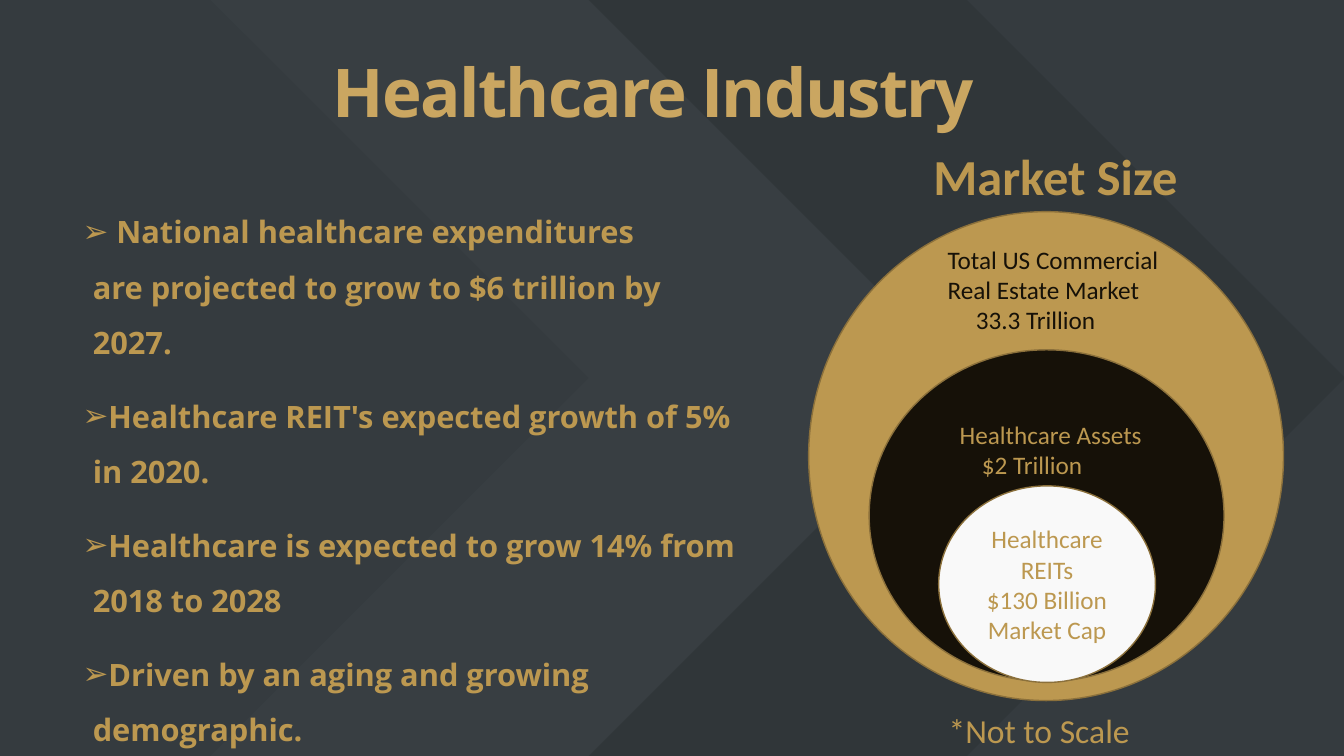
from lxml.etree import SubElement
from pptx import Presentation
from pptx.dml.color import RGBColor
from pptx.enum.shapes import MSO_SHAPE
from pptx.enum.text import MSO_ANCHOR, MSO_AUTO_SIZE, PP_ALIGN
from pptx.oxml.ns import qn
from pptx.util import Inches, Pt

GOLD = RGBColor(0xBC, 0x98, 0x50)
TITLE_GOLD = RGBColor(0xCA, 0xA6, 0x61)
OUTLINE = RGBColor(0x8B, 0x70, 0x3B)
NEAR_BLACK = RGBColor(0x16, 0x11, 0x08)
OFF_WHITE = RGBColor(0xF9, 0xF9, 0xF9)
BACKGROUND = RGBColor(0x35, 0x3B, 0x3F)
SLATE = RGBColor(0x54, 0x5E, 0x64)
CHARCOAL = RGBColor(0x26, 0x2B, 0x2E)

# Content: "~" marks a non-breaking space
TITLE = "Healthcare Industry~"
BULLETS = [
    "~National healthcare~expenditures are~projected to grow~to $6 trillion by 2027.",
    "Healthcare~REIT's expected growth of 5% in 2020.",
    "Healthcare is expected to grow 14% from 2018 to 2028",
    "Driven by an aging~and growing demographic.",
]
# left, fill, opacity in percent
CHEVRONS = [(2.09, SLATE, 10), (5.84, CHARCOAL, 30)]
# box, fill
MARKET_ELLIPSES = [
    ((8.02, 2.1, 4.71, 4.85), GOLD),
    ((8.62, 3.47, 3.52, 3.29), NEAR_BLACK),
    ((9.31, 4.82, 2.15, 1.95), OFF_WHITE),
]
REIT_LINES = ["Healthcare REITs", "$130 Billion Market Cap"]
# box, lines, indent of the second line, format
LABELS = [
    ((9.3, 2.37, 2.58, 1.31), ["Total US Commercial Real~Estate Market", "33.3 Trillion"],
     0.28, dict(color=NEAR_BLACK)),
    ((9.42, 4.11, 3, 0.71), ["Healthcare Assets", "$2 Trillion"], 0.22, {}),
    ((9.16, 1.39, 2.76, 0.71), ["Market Size"], 0, dict(size=36, bold=True)),
    ((9.31, 6.99, 3, 0.5), ["*Not to Scale"], 0, dict(size=24)),
]


def write_paragraph(paragraph, text, size=18, font="Calibri", color=GOLD, bold=False,
                    align=PP_ALIGN.LEFT, line_spacing=1.0, space_before=0, tracking=None):
    paragraph.alignment = align
    paragraph.line_spacing = line_spacing
    paragraph.space_before = Pt(space_before)
    run = paragraph.add_run()
    run.text = text.replace("~", chr(160))
    run.font.size = Pt(size)
    run.font.name = font
    run.font.bold = bold
    run.font.color.rgb = color
    if tracking is not None:
        run.font._element.set("spc", str(int(tracking * 100)))


def write_lines(frame, lines, **text_format):
    for index, line in enumerate(lines):
        paragraph = frame.add_paragraph() if index else frame.paragraphs[0]
        write_paragraph(paragraph, line, **text_format)


def set_indent(paragraph, left, first=0.0):
    properties = paragraph._p.get_or_add_pPr()
    properties.set("marL", str(Inches(left)))
    properties.set("indent", str(Inches(first)))
    return properties


def place(shape, box):
    shape.left, shape.top, shape.width, shape.height = map(Inches, box)


def add_filled_shape(slide, kind, box, fill):
    shape = slide.shapes.add_shape(kind, *map(Inches, box))
    shape.shadow.inherit = False
    shape.fill.solid()
    shape.fill.fore_color.rgb = fill
    return shape


def main():
    presentation = Presentation()
    presentation.slide_width = Inches(13.33)
    presentation.slide_height = Inches(7.5)
    slide = presentation.slides.add_slide(presentation.slide_layouts[1])
    slide.background.fill.solid()
    slide.background.fill.fore_color.rgb = BACKGROUND

    # Background chevrons, moved behind the placeholders
    for position, (left, fill, opacity) in enumerate(CHEVRONS):
        chevron = add_filled_shape(slide, MSO_SHAPE.CHEVRON, (left, 0, 7.5, 7.5), fill)
        chevron.line.fill.background()
        color = chevron.element.spPr.find(qn("a:solidFill")).find(qn("a:srgbClr"))
        SubElement(color, qn("a:alpha")).set("val", str(opacity * 1000))
        slide.shapes.element.insert(2 + position, chevron.element)

    # Title
    title = slide.shapes.title
    place(title, (0.7, 0.17, 11.72, 1.58))
    title.text_frame.auto_size = MSO_AUTO_SIZE.NONE
    title.text_frame.vertical_anchor = MSO_ANCHOR.MIDDLE
    write_lines(title.text_frame, [TITLE], size=48, font="Open Sans", color=TITLE_GOLD,
                bold=True, align=PP_ALIGN.CENTER, line_spacing=0.85, tracking=-1.2)

    # Bullet list
    body = slide.placeholders[1]
    place(body, (0.72, 1.88, 6.73, 4.46))
    body.text_frame.auto_size = MSO_AUTO_SIZE.NONE
    body.text_frame.vertical_anchor = MSO_ANCHOR.TOP
    write_lines(body.text_frame, BULLETS, size=22, font="Open Sans", bold=True,
                line_spacing=1.5, space_before=13)
    for paragraph in body.text_frame.paragraphs:
        properties = set_indent(paragraph, 0.1, -0.1)
        SubElement(properties, qn("a:buChar")).set("char", "➢")

    # Nested market ellipses
    for box, fill in MARKET_ELLIPSES:
        ellipse = add_filled_shape(slide, MSO_SHAPE.OVAL, box, fill)
        ellipse.line.color.rgb = OUTLINE
        ellipse.line.width = Pt(1)

    # Text of the innermost ellipse
    ellipse.text_frame.word_wrap = True
    ellipse.text_frame.vertical_anchor = MSO_ANCHOR.MIDDLE
    write_lines(ellipse.text_frame, REIT_LINES, align=PP_ALIGN.CENTER)

    # Labels
    for box, lines, indent, text_format in LABELS:
        label = slide.shapes.add_textbox(*map(Inches, box))
        label.text_frame.word_wrap = True
        write_lines(label.text_frame, lines, **text_format)
        for paragraph in label.text_frame.paragraphs[1:]:
            set_indent(paragraph, indent)

    presentation.save("out.pptx")


if __name__ == "__main__":
    main()
